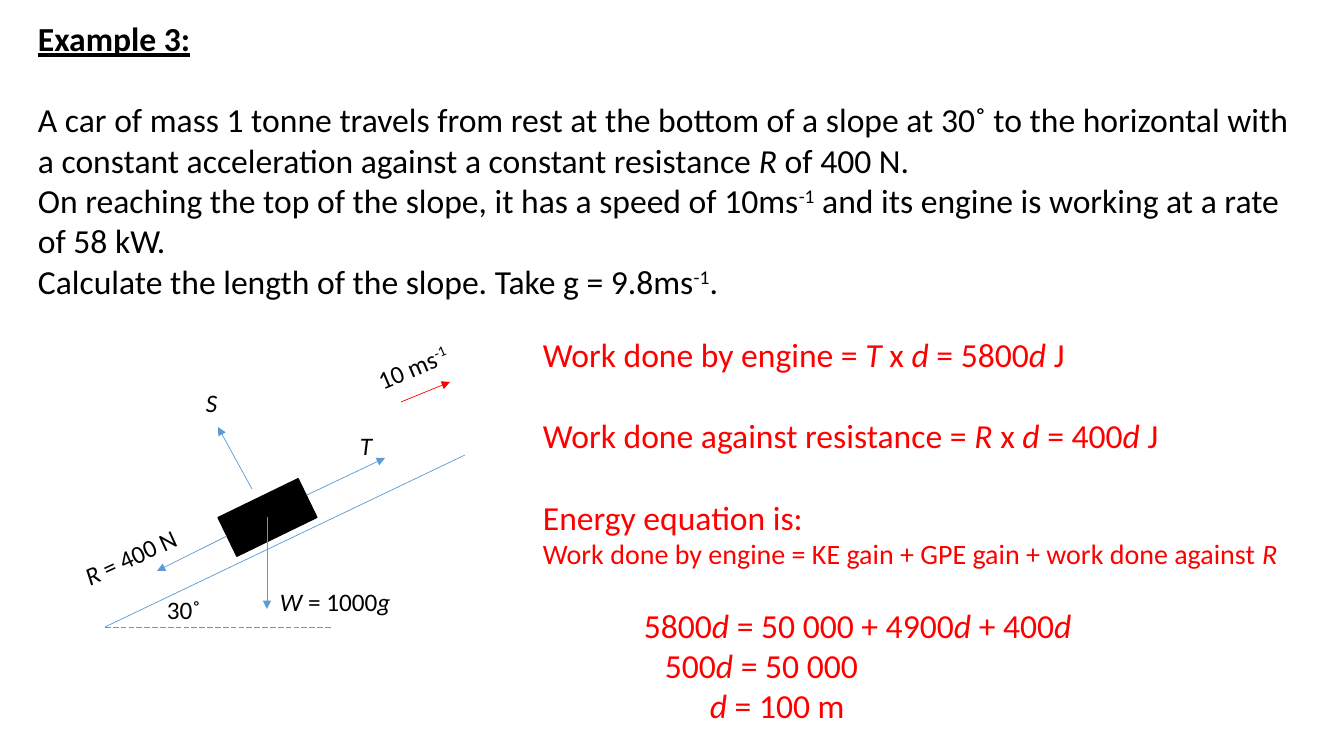
from lxml.etree import SubElement
from pptx import Presentation
from pptx.dml.color import RGBColor
from pptx.enum.dml import MSO_LINE_DASH_STYLE as Dash
from pptx.enum.shapes import MSO_CONNECTOR as Connector, MSO_SHAPE as Shape
from pptx.oxml.ns import qn
from pptx.util import Pt

BLACK = RGBColor(0x00, 0x00, 0x00)
RED = RGBColor(0xFF, 0x00, 0x00)
BLUE = RGBColor(0x5B, 0x9B, 0xD5)
FONT = "Calibri"
PX = 914400 / 100.8
LINE_HEIGHT = 1.22  # Calibri line height per point of size

# In all wording, _x_ is italic and ^x^ is superscript.
# Paragraph: wording, size in pt, size of the gap line above (0 for none), indent in px
PROBLEM_BOX = (28, 13, 1272, 295)
PROBLEM = [
    ("Example 3:", 24, 0, 0),
    ("A car of mass 1 tonne travels from rest at the bottom of a slope at 30˚ to the "
     "horizontal with a constant acceleration against a constant resistance _R_ of 400 N.",
     24, 24, 0),
    ("On reaching the top of the slope, it has a speed of 10ms^-1^ and its engine is "
     "working at a rate of 58 kW.", 24, 0, 0),
    ("Calculate the length of the slope. Take g = 9.8ms^-1^.", 24, 0, 0),
]
SOLUTION_BOX = (533, 329, 778, 404)
SOLUTION = [
    ("Work done by engine = _T_ x _d_ = 5800_d_ J", 24, 0, 0),
    ("Work done against resistance = _R_ x _d_ = 400_d_ J", 24, 24, 0),
    ("Energy equation is:", 24, 24, 0),
    ("Work done by engine = KE gain + GPE gain + work done against _R_", 20, 0, 0),
    ("5800_d_ = 50 000 + 4900_d_ + 400_d_", 24, 20, 101),
    ("500_d_ = 50 000", 24, 0, 122),
    ("_d_ = 100 m", 24, 0, 167),
]

SLOPE_FOOT = (105, 627)
SLOPE = (SLOPE_FOOT, (465, 455))
GROUND = (SLOPE_FOOT, (331, 627))
CAR_BOX, CAR_ANGLE = (223, 496, 89, 43), 334.1
ARROWS = [  # start, end, colour
    ((252, 489), (218, 427), BLUE),
    ((227, 536), (157, 571), BLUE),
    ((307, 495), (385, 458), BLUE),
    ((267, 517), (267, 609), BLUE),
    ((401, 402), (450, 382), RED),
]
LABELS = [  # wording, box, rotation
    ("30˚", (157, 589, 54, 40), 0),
    ("_S_", (196, 382, 32, 40), 0),
    ("_T_", (350, 425, 32, 40), 0),
    ("_R_ = 400 N", (71, 535, 126, 40), 335.3),
    ("_W_ = 1000_g_", (270, 581, 131, 40), 0),
    ("10 ms^-1^", (366, 346, 96, 40), 337),
]


def emu(lengths):
    return [round(length * PX) for length in lengths]


def add_marked_runs(paragraph, wording, size, color):
    for i, slanted in enumerate(wording.split("_")):
        for j, piece in enumerate(slanted.split("^")):
            if not piece:
                continue
            run = paragraph.add_run()
            run.text = piece
            font = run.font
            font.name, font.size, font.color.rgb = FONT, Pt(size), color
            font.italic = i % 2 == 1
            if j % 2:
                font._element.set("baseline", "30000")


def add_text(slide, box, paragraphs, color, wrap=True, rotation=0):
    textbox = slide.shapes.add_textbox(*emu(box))
    textbox.rotation = rotation
    frame = textbox.text_frame
    frame.word_wrap = wrap
    for index, (wording, size, gap, indent) in enumerate(paragraphs):
        paragraph = frame.add_paragraph() if index else frame.paragraphs[0]
        paragraph.space_before = Pt(round(gap * LINE_HEIGHT, 1))
        paragraph._p.get_or_add_pPr().set("marL", str(round(indent * PX)))
        add_marked_runs(paragraph, wording, size, color)
    return frame


def add_line(slide, start, end, color=BLUE, arrow=False):
    line = slide.shapes.add_connector(Connector.STRAIGHT, *emu(start + end))
    line.line.color.rgb = color
    line.line.width = Pt(0.5)
    if arrow:
        SubElement(line.line._get_or_add_ln(), qn("a:tailEnd"), type="triangle")
    SubElement(line._element.spPr, qn("a:effectLst"))
    return line


def add_car(slide):
    car = slide.shapes.add_shape(Shape.RECTANGLE, *emu(CAR_BOX))
    car.rotation = CAR_ANGLE
    car.shadow.inherit = False
    car.fill.solid()
    car.fill.fore_color.rgb = BLACK
    car.line.color.rgb = BLACK
    car.line.width = Pt(1)


def main():
    deck = Presentation()
    deck.slide_width, deck.slide_height = emu((1344, 756))
    slide = deck.slides.add_slide(deck.slide_layouts[6])

    problem = add_text(slide, PROBLEM_BOX, PROBLEM, BLACK)
    heading = problem.paragraphs[0].runs[0].font
    heading.bold = heading.underline = True

    add_line(slide, *SLOPE)
    add_line(slide, *GROUND).line.dash_style = Dash.LONG_DASH
    add_car(slide)
    for start, end, color in ARROWS:
        add_line(slide, start, end, color, arrow=True)
    for wording, box, rotation in LABELS:
        add_text(slide, box, [(wording, 18, 0, 0)], BLACK, False, rotation)

    add_text(slide, SOLUTION_BOX, SOLUTION, RED)
    deck.save("out.pptx")


if __name__ == "__main__":
    main()
